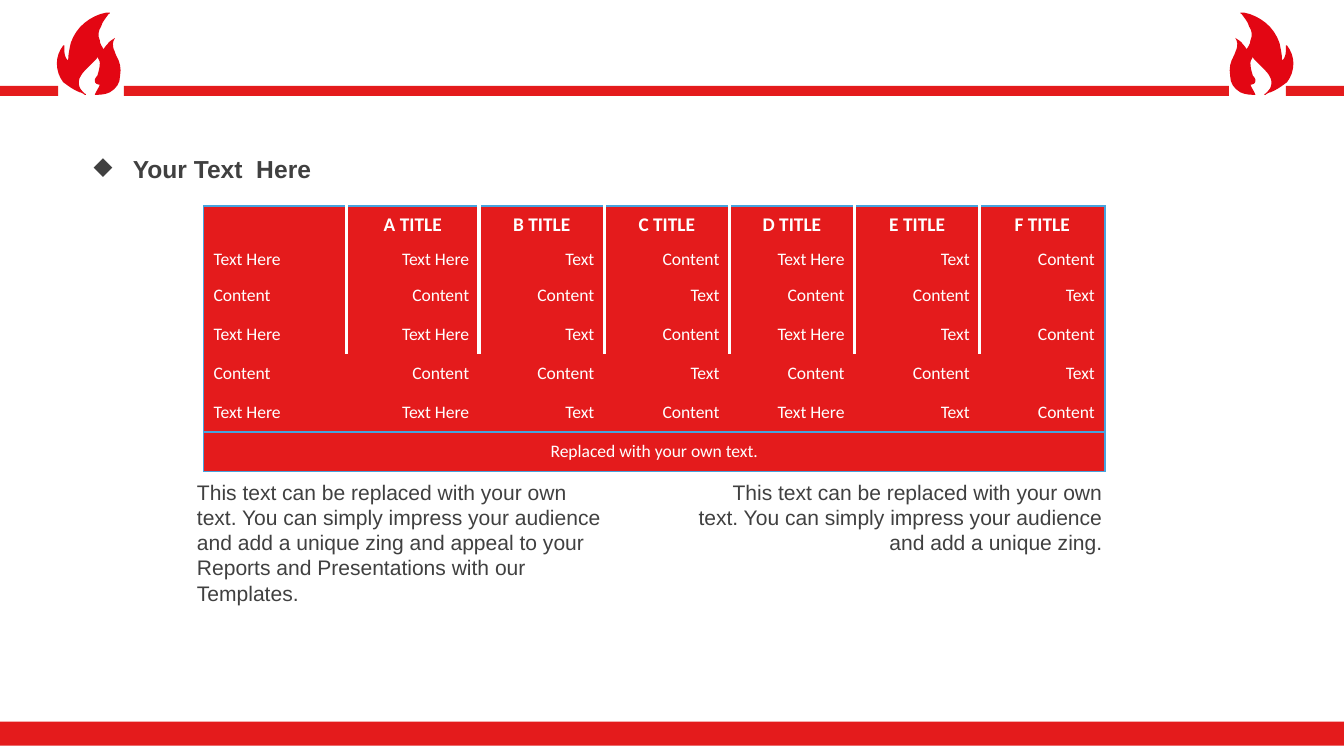
from lxml import etree
from pptx import Presentation
from pptx.dml.color import RGBColor
from pptx.enum import shapes, text
from pptx.oxml import ns
from pptx.util import Inches, Pt

RED = RGBColor(0xE4, 0x1B, 0x1C)
FLAME = RGBColor(0xE3, 0x06, 0x13)
WHITE = RGBColor(0xFF, 0xFF, 0xFF)
BLUE = RGBColor(0x47, 0xA3, 0xDE)
GREY = RGBColor(0x40, 0x40, 0x40)
LEFT, MID, RIGHT = text.PP_ALIGN.LEFT, text.PP_ALIGN.CENTER, text.PP_ALIGN.RIGHT

START = (32, 35)
CURVES = [
    (33, 37, 34, 38, 34, 40), (34, 43, 33, 47, 32, 50), (31, 51, 30, 52, 30, 54),
    (30, 56, 32, 57, 34, 57), (33, 60, 31, 62, 30, 65), (34, 65, 38, 65, 42, 63),
    (47, 60, 50, 56, 50, 50), (51, 44, 50, 39, 47, 34), (46, 32, 46, 31, 45, 29),
    (44, 26, 44, 23, 46, 20), (43, 22, 41, 23, 40, 25), (39, 26, 38, 27, 37, 29),
    (36, 27, 34, 25, 34, 22), (32, 18, 33, 14, 35, 11), (36, 7, 39, 4, 41, 1),
    (42, 1, 42, 0, 42, 0), (41, 0, 40, 0, 39, 0), (33, 1, 27, 4, 22, 8),
    (17, 12, 13, 18, 11, 24), (10, 29, 9, 33, 9, 37), (9, 38, 9, 38, 8, 37),
    (7, 36, 6, 33, 6, 31), (6, 29, 6, 28, 6, 26), (5, 26, 5, 26, 5, 26),
    (2, 30, 0, 35, 0, 40), (0, 46, 2, 51, 5, 55), (9, 58, 13, 61, 18, 63),
    (19, 63, 21, 64, 22, 65), (23, 65, 23, 65, 23, 65), (23, 64, 22, 64, 22, 64),
    (20, 62, 19, 61, 18, 59), (17, 56, 17, 53, 19, 50), (20, 48, 22, 46, 24, 44),
    (26, 42, 28, 40, 30, 38), (31, 37, 32, 36, 32, 35),
]
HEADS = [""] + [f"{name} TITLE" for name in "ABCDEF"]
ODD = ["Text Here"] + ["Text Here", "Text", "Content"] * 2
EVEN = ["Content"] + ["Content", "Content", "Text"] * 2
ROWS = [HEADS, ODD, EVEN, ODD, EVEN, ODD, ["Replaced with your own text."] + [""] * 6]
WIDTHS = [1.13, 1.05] + [0.99] * 5
HEIGHTS = [0.29, 0.26] + [0.31] * 5
LONG = ("This text can be replaced with your own text. You can simply impress your "
        "audience and add a unique zing and appeal to your Reports and Presentations "
        "with our Templates.")
SHORT = ("This text can be replaced with your own text. You can simply impress your "
         "audience and add a unique zing.")


def paint(shape, color):
    """Give a shape a plain fill without line or shadow."""
    shape.shadow.inherit = False
    shape.fill.solid()
    shape.fill.fore_color.rgb = color
    shape.line.fill.background()


def style(para, name, size, color, align, bold=False):
    """Set the font and alignment of a paragraph."""
    para.alignment = align
    font = para.font
    font.name, font.size, font.bold = name, Pt(size), bold
    font.color.rgb = color


def bar(slide, left, top, width, height):
    """Draw a red bar in the given box."""
    box = map(Inches, (left, top, width, height))
    paint(slide.shapes.add_shape(shapes.MSO_SHAPE.RECTANGLE, *box), RED)


def flame(slide, left, top, width, flip=False):
    """Draw a flame in the given box, mirrored on demand."""
    dots, last = [], START
    for curve in CURVES:
        a, b, end = curve[:2], curve[2:4], curve[4:]
        for t in (0.25, 0.5, 0.75, 1):
            s = 1 - t
            dots.append(tuple(
                s**3 * p + 3 * s * s * t * q + 3 * s * t * t * r + t**3 * e
                for p, q, r, e in zip(last, a, b, end)))
        last = end
    spots = [(Inches(left + (width - x / 100 if flip else x / 100)), Inches(top + y / 100))
             for x, y in dots]
    form = slide.shapes.build_freeform(*spots[-1])
    form.add_line_segments(spots, close=True)
    paint(form.convert_to_shape(), FLAME)


def header(slide, left, top, width):
    """Place the broken band and the two flames that flank it."""
    bar(slide, left, top + 0.58, 0.46, 0.08)
    bar(slide, left + 0.98, top + 0.58, 8.74, 0.08)
    bar(slide, left + width - 0.46, top + 0.58, 0.46, 0.08)
    flame(slide, left + 0.45, top, 0.51)
    flame(slide, left + width - 0.91, top, 0.51, flip=True)


def heading(slide, left, top, width, height):
    """Move the title into the box and give it a diamond bullet."""
    title = slide.shapes.title
    title.left, title.top, title.width, title.height = map(Inches, (left, top, width, height))
    frame = title.text_frame
    frame.text = "Your Text  Here"
    frame.auto_size = text.MSO_AUTO_SIZE.NONE
    frame.vertical_anchor = text.MSO_ANCHOR.TOP
    para = frame.paragraphs[0]
    style(para, "Arial", 14, GREY, LEFT, bold=True)
    para.line_spacing = 1.0
    para.space_before = Pt(0)
    props = para._p.get_or_add_pPr()
    props.set("marL", str(Inches(0.31)))
    props.set("indent", str(-Inches(0.31)))
    mark = etree.Element(ns.qn("a:buChar"), char="◆")
    props.find(ns.qn("a:defRPr")).addprevious(mark)


def edge(cell, side, color, size):
    """Add one border line to a cell, or an empty one without a colour."""
    props = cell._tc.get_or_add_tcPr()
    line = etree.SubElement(props, ns.qn(f"a:ln{side}"), w=str(Pt(size)))
    if color is None:
        etree.SubElement(line, ns.qn("a:noFill"))
    else:
        fill = etree.SubElement(line, ns.qn("a:solidFill"))
        etree.SubElement(fill, ns.qn("a:srgbClr"), val=str(color))


def fill_cell(cell, row, col, label):
    """Write a table cell and set its borders and fill."""
    foot, inner = row == 6, (WHITE, 2.25) if row < 4 else (None, 0)
    rim = (BLUE, 1)
    edge(cell, "L", *(rim if col == 0 or foot else inner))
    edge(cell, "R", *(rim if col == 6 or foot else inner))
    edge(cell, "T", *(rim if row == 0 or foot else (None, 0)))
    edge(cell, "B", *(rim if row >= 5 else (None, 0)))
    cell.fill.solid()
    cell.fill.fore_color.rgb = RED
    cell.margin_left = cell.margin_right = Inches(0.08)
    cell.margin_top = cell.margin_bottom = Inches(0.04)
    cell.vertical_anchor = text.MSO_ANCHOR.MIDDLE
    cell.text = label
    align = MID if row in (0, 6) else RIGHT if col else LEFT
    style(cell.text_frame.paragraphs[0], "Calibri", 10 if row else 11, WHITE, align, row == 0)


def grid(slide, left, top):
    """Build the red table with its merged foot row."""
    box = map(Inches, (left, top, sum(WIDTHS), sum(HEIGHTS)))
    table = slide.shapes.add_table(len(ROWS), len(WIDTHS), *box).table
    table.first_row = table.horz_banding = False
    kind = table._tbl.tblPr.find(ns.qn("a:tableStyleId"))
    kind.text = "{2D5ABB26-0587-4C30-8999-92F81FD0307C}"
    for col, width in zip(table.columns, WIDTHS):
        col.width = Inches(width)
    for row, height in zip(table.rows, HEIGHTS):
        row.height = Inches(height)
    for row, labels in enumerate(ROWS):
        for col, label in enumerate(labels):
            fill_cell(table.cell(row, col), row, col, label)
    table.cell(6, 0).merge(table.cell(6, 6))


def note(slide, left, top, width, height, words, align):
    """Place a wrapped paragraph in the given box."""
    frame = slide.shapes.add_textbox(*map(Inches, (left, top, width, height))).text_frame
    frame.word_wrap = True
    frame.text = words
    style(frame.paragraphs[0], "Arial", 12, GREY, align)


def main():
    """Build the slide and save it."""
    deck = Presentation()
    deck.slide_width, deck.slide_height = Inches(10.63), Inches(5.91)
    slide = deck.slides.add_slide(deck.slide_layouts[5])
    bar(slide, 0, 5.71, 10.63, 0.19)
    header(slide, 0, 0.1, 10.63)
    heading(slide, 0.64, 1.17, 2.36, 0.34)
    grid(slide, 1.61, 1.63)
    note(slide, 1.46, 3.74, 3.46, 1.11, LONG, LEFT)
    note(slide, 5.36, 3.74, 3.46, 0.71, SHORT, RIGHT)
    deck.save("out.pptx")


if __name__ == "__main__":
    main()
